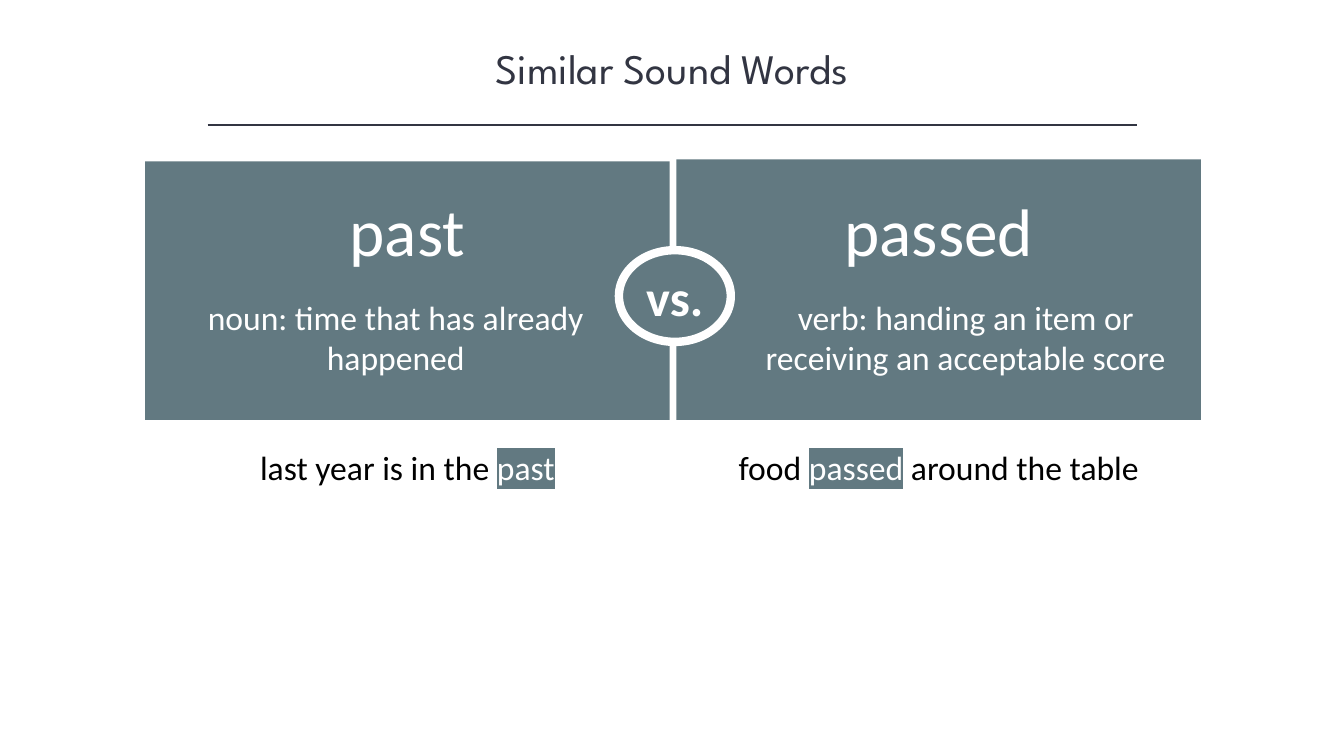
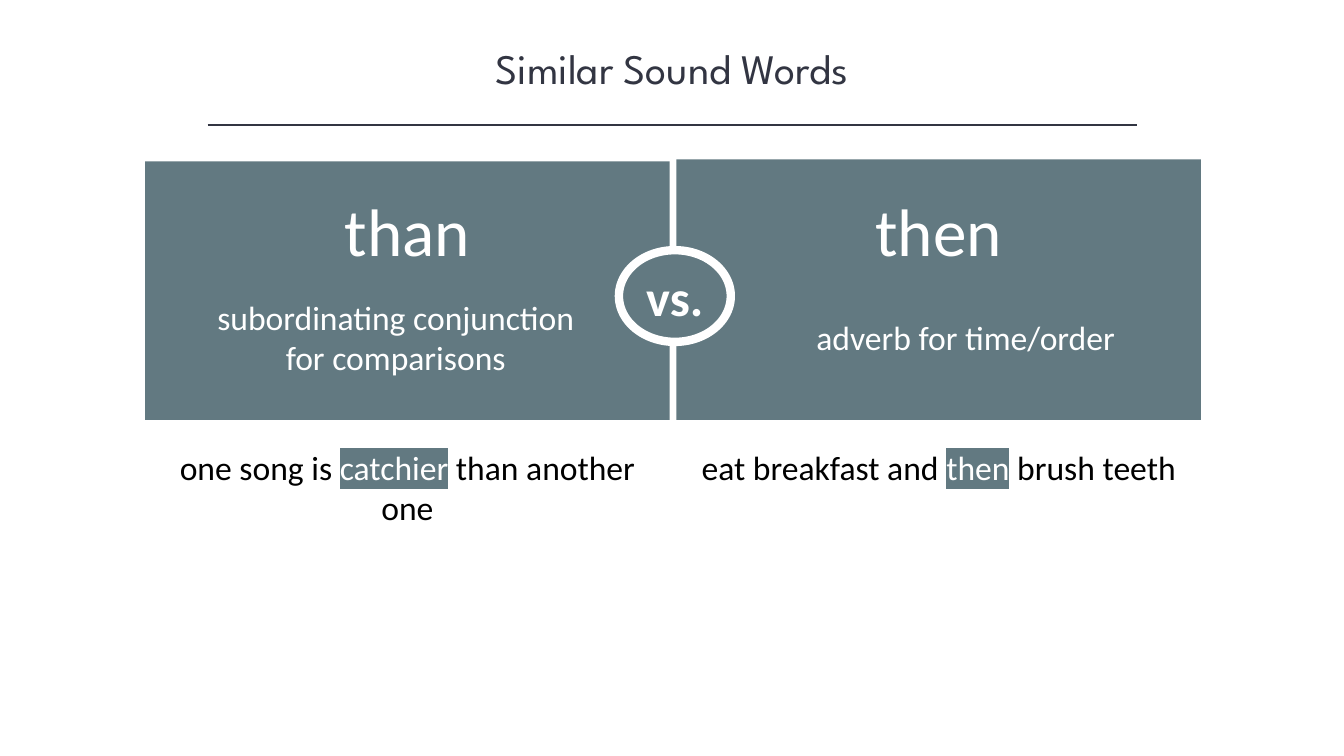
from lxml import etree
from pptx import Presentation
from pptx.dml.color import RGBColor
from pptx.enum import shapes, text
from pptx.oxml.ns import qn
from pptx.util import Pt

SLATE = RGBColor(0x62, 0x79, 0x81)
INK = RGBColor(0x32, 0x35, 0x42)
WHITE = RGBColor(0xFF, 0xFF, 0xFF)
BLACK = RGBColor(0x00, 0x00, 0x00)
TITLE_FONT, BODY_FONT = "League Spartan", "Calibri"

TITLE = "Similar Sound Words"
# Each example is (before, highlighted word, after).
WORD_PAIRS = [
    [
        {"word": "past", "definition": "noun: time that has already happened",
         "example": ("last year is in the ", "past", "")},
        {"word": "passed",
         "definition": "verb: handing an item or receiving an acceptable score",
         "example": ("food ", "passed", " around the table")},
    ],
    [
        {"word": "than", "definition": "subordinating conjunction for comparisons",
         "example": ("one song is ", "catchier", " than another one")},
        {"word": "then", "definition": "adverb for time/order",
         "example": ("eat breakfast and ", "then", " brush teeth")},
    ],
]

# Boxes are (left, top, width, height) in points.
TITLE_BOX = (120, 26.6, 720, 44)
RULE_LEFT, RULE_RIGHT, RULE_TOP = 148.3, 812.2, 89.3
PANELS = [(103.7, 115.2, 374.6, 184.8), (483.2, 113.9, 374.6, 186.1)]
DEFINITIONS = [(131.8, 208.1, 301.7, 65.5), (535, 208.1, 309.6, 65.5)]
BADGE = (442.1, 178.7, 79.9, 65.5)
WORD_TOP, WORD_HEIGHT = 131.8, 65.5
EXAMPLE_TOP, EXAMPLE_HEIGHT = 315.6, 36


def points(box):
    return [Pt(value) for value in box]


def add_run(paragraph, content, size, color, font=BODY_FONT, bold=False, highlight=None):
    run = paragraph.add_run()
    run.text = content
    run.font.size = Pt(size)
    run.font.name = font
    run.font.bold = bold
    run.font.color.rgb = color
    if highlight is not None:
        mark = etree.Element(qn("a:highlight"))
        etree.SubElement(mark, qn("a:srgbClr"), val=str(highlight))
        run._r.get_or_add_rPr().find(qn("a:solidFill")).addnext(mark)


def add_text(slide, box, anchor=text.MSO_ANCHOR.TOP):
    """Add a wrapping text box and return its centred paragraph."""
    frame = slide.shapes.add_textbox(*points(box)).text_frame
    frame.word_wrap = True
    frame.vertical_anchor = anchor
    paragraph = frame.paragraphs[0]
    paragraph.alignment = text.PP_ALIGN.CENTER
    return paragraph


def add_solid(group, kind, box):
    shape = group.shapes.add_shape(kind, *points(box))
    shape.shadow.inherit = False
    shape.fill.solid()
    shape.fill.fore_color.rgb = SLATE
    shape.line.fill.background()
    return shape


def add_header(slide):
    add_run(add_text(slide, TITLE_BOX), TITLE, 30, INK, TITLE_FONT)
    rule = slide.shapes.add_connector(
        shapes.MSO_CONNECTOR.STRAIGHT,
        *points((RULE_LEFT, RULE_TOP, RULE_RIGHT, RULE_TOP)))
    rule.line.color.rgb = INK
    rule.line.width = Pt(1)
    etree.SubElement(rule._element.spPr, qn("a:effectLst"))


def add_versus_panels(slide):
    group = slide.shapes.add_group_shape()
    for panel in PANELS:
        add_solid(group, shapes.MSO_SHAPE.RECTANGLE, panel)
    badge = add_solid(group, shapes.MSO_SHAPE.OVAL, BADGE)
    badge.line.color.rgb = WHITE
    badge.line.width = Pt(6)
    frame = badge.text_frame
    frame.vertical_anchor = text.MSO_ANCHOR.MIDDLE
    frame.paragraphs[0].alignment = text.PP_ALIGN.CENTER
    add_run(frame.paragraphs[0], "vs.", 36, WHITE, bold=True)


def add_entry(slide, entry, panel, definition_box):
    left, _, width, _ = panel
    add_run(add_text(slide, definition_box, text.MSO_ANCHOR.MIDDLE),
            entry["definition"], 24, WHITE)
    add_run(add_text(slide, (left, WORD_TOP, width, WORD_HEIGHT)),
            entry["word"], 48, WHITE)
    before, marked, after = entry["example"]
    example = add_text(slide, (left, EXAMPLE_TOP, width, EXAMPLE_HEIGHT))
    add_run(example, before, 24, BLACK)
    add_run(example, marked, 24, WHITE, highlight=SLATE)
    if after:
        add_run(example, after, 24, BLACK)


def main():
    presentation = Presentation()
    presentation.slide_width, presentation.slide_height = Pt(960), Pt(540)
    for pair in WORD_PAIRS:
        slide = presentation.slides.add_slide(presentation.slide_layouts[6])
        add_header(slide)
        add_versus_panels(slide)
        for entry, panel, definition_box in zip(pair, PANELS, DEFINITIONS):
            add_entry(slide, entry, panel, definition_box)
    presentation.save("out.pptx")


if __name__ == "__main__":
    main()
